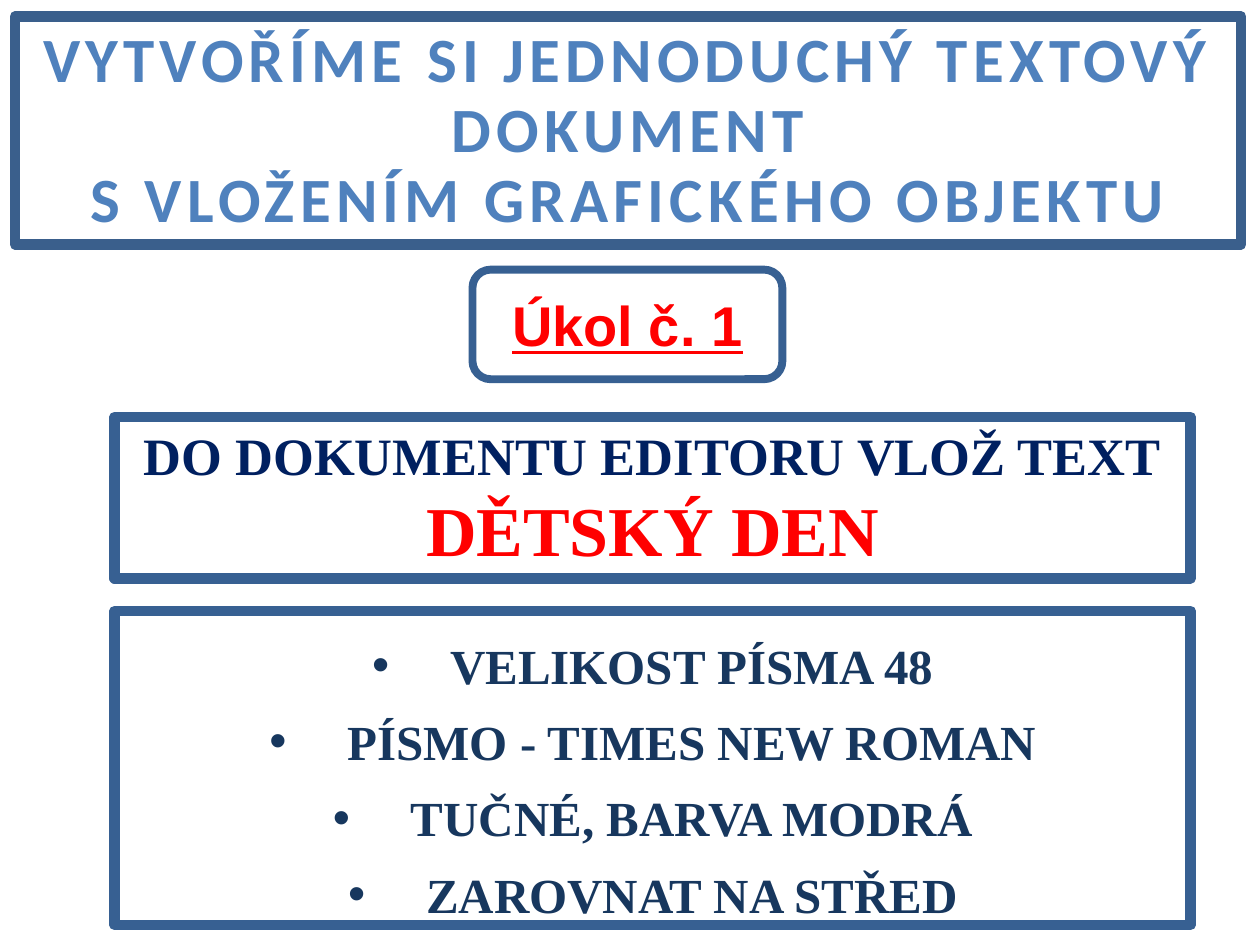
from dataclasses import dataclass

from lxml.etree import SubElement
from pptx import Presentation
from pptx.dml.color import RGBColor
from pptx.enum.shapes import MSO_SHAPE as SHAPE
from pptx.enum.text import MSO_ANCHOR as ANCHOR, MSO_AUTO_SIZE as AUTO, PP_ALIGN as ALIGN
from pptx.oxml.ns import qn
from pptx.util import Inches, Pt


@dataclass(frozen=True)
class Theme:
    paper: str = "FFFFFF"
    title_line: str = "3A5F8C"
    line: str = "376092"
    title: str = "4F81BD"
    accent: str = "FF0000"
    task: str = "002060"
    steps: str = "17375E"
    title_size: int = 36
    label_size: int = 32
    task_size: int = 30
    phrase_size: int = 40
    steps_size: int = 28


theme = Theme()


def frame(sp, box, color, width, anchor):
    """Place a shape and give it a white fill and a thick rounded outline."""
    for name, value in zip(("left", "top", "width", "height"), box):
        setattr(sp, name, Inches(value))
    sp.shadow.inherit = False
    sp.fill.solid()
    sp.fill.fore_color.rgb = RGBColor.from_string(theme.paper)
    sp.line.color.rgb = RGBColor.from_string(color)
    sp.line.width = Pt(width)
    SubElement(sp.line._get_or_add_ln(), qn("a:round"))
    tf = sp.text_frame
    for name, value in dict(word_wrap=True, auto_size=AUTO.NONE, vertical_anchor=anchor).items():
        setattr(tf, name, value)
    return tf


def write(tf, lines, font, size, color, spacing=1.0, underline=False):
    """Fill a frame with centred bold paragraphs and return them."""
    tf.text = "\n".join(lines)
    look = dict(name=font, size=Pt(size), bold=True, underline=underline)
    for p in tf.paragraphs:
        p.alignment = ALIGN.CENTER
        p.line_spacing = spacing
        p.space_before = Pt(0)
        for r in p.runs:
            for name, value in look.items():
                setattr(r.font, name, value)
            r.font.color.rgb = RGBColor.from_string(color)
    return tf.paragraphs


prs = Presentation()
prs.slide_width, prs.slide_height = Inches(10), Inches(7.5)
s = prs.slides.add_slide(prs.slide_layouts[1])
title, body = s.placeholders

# Title with two opposite corners rounded
tf = frame(title, (0.12, 0.13, 9.73, 1.81), theme.title_line, 6, ANCHOR.MIDDLE)
geom = SubElement(title._element.spPr, qn("a:prstGeom"), prst="round2DiagRect")
guides = SubElement(geom, qn("a:avLst"))
for name, value in (("adj1", 50000), ("adj2", 0)):
    SubElement(guides, qn("a:gd"), name=name, fmla=f"val {value}")
title._element.spPr.find(qn("a:xfrm")).addnext(geom)
heading = ["VYTVOŘÍME SI JEDNODUCHÝ TEXTOVÝ DOKUMENT", "S VLOŽENÍM GRAFICKÉHO OBJEKTU"]
for p in write(tf, heading, "Calibri", theme.title_size, theme.title, Pt(40)):
    p.runs[0].font._element.set("spc", "300")

# Task label
label = s.shapes.add_shape(SHAPE.ROUNDED_RECTANGLE, 0, 0, 0, 0)
tf = frame(label, (3.75, 2.14, 2.46, 0.87), theme.line, 4.5, ANCHOR.MIDDLE)
write(tf, ["Úkol č. 1"], "Arial", theme.label_size, theme.accent, underline=True)

# Task text
task = s.shapes.add_shape(SHAPE.RECTANGLE, 0, 0, 0, 0)
tf = frame(task, (0.91, 3.31, 8.54, 1.28), theme.line, 6, ANCHOR.TOP)
lines = ["DO DOKUMENTU EDITORU VLOŽ TEXT", "DĚTSKÝ DEN"]
phrase = write(tf, lines, "Times New Roman", theme.task_size, theme.task)[1].runs[0].font
phrase.size = Pt(theme.phrase_size)
phrase.color.rgb = RGBColor.from_string(theme.accent)

# Formatting steps
tf = frame(body, (0.91, 4.85, 8.54, 2.49), theme.line, 6, ANCHOR.TOP)
steps = ["VELIKOST PÍSMA 48", "PÍSMO - TIMES NEW ROMAN", "TUČNÉ, BARVA MODRÁ", "ZAROVNAT NA STŘED"]
for p in write(tf, steps, "Times New Roman", theme.steps_size, theme.steps, 1.3):
    pPr = p._p.get_or_add_pPr()
    pPr.set("marL", str(Inches(0.62)))
    pPr.set("indent", str(-Inches(0.62)))
    SubElement(pPr, qn("a:buFont"), typeface="Arial")
    SubElement(pPr, qn("a:buChar"), char="•")

prs.save("out.pptx")
